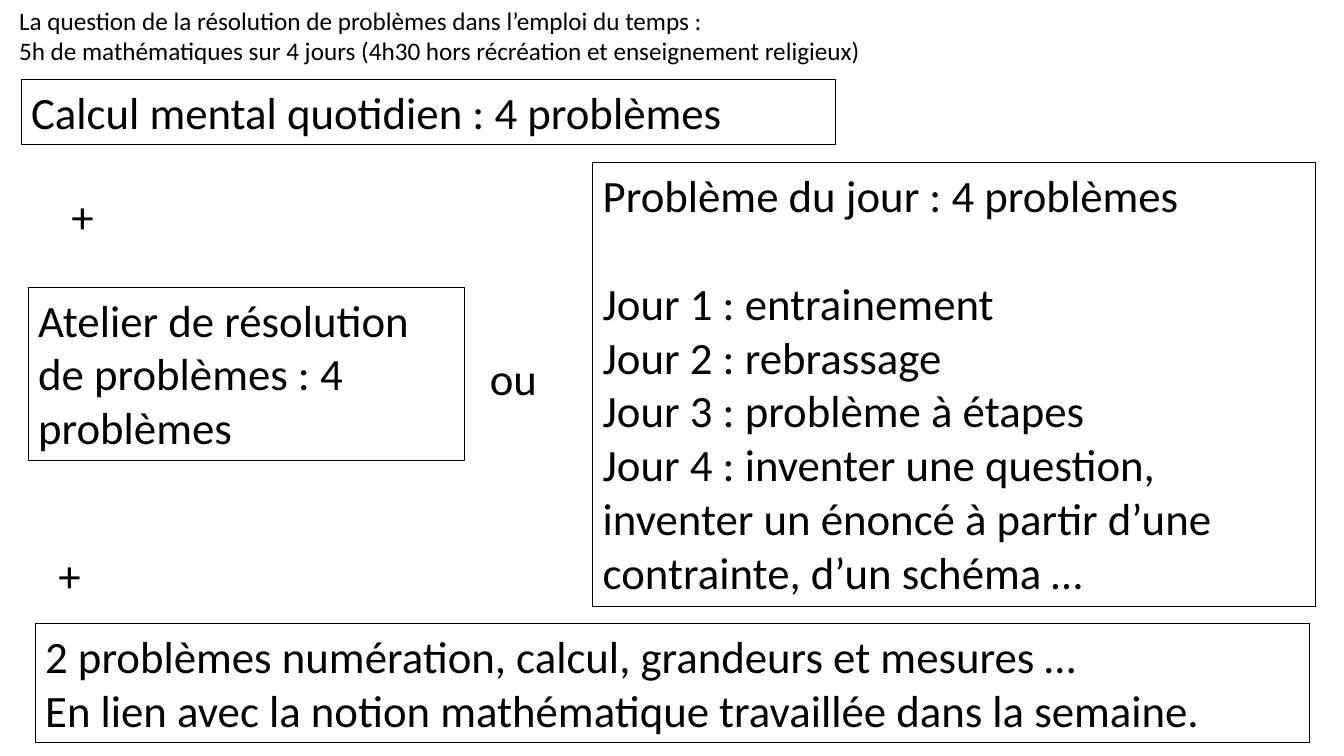
"""Build the slide on problem solving in the weekly maths timetable."""
import pptx
import pptx.dml.color
import pptx.enum.shapes
import pptx.enum.text
import pptx.util

PX = 9144
BLACK = pptx.dml.color.RGBColor(0, 0, 0)
FONT = "Calibri"
BODY_SIZE = 32
LINE_GAP = 39


def px(*lengths):
    """Turn lengths in px into EMU."""
    return [pptx.util.Emu(n * PX) for n in lengths]


def write(sp, lines, size):
    """Fill a shape with one left-aligned paragraph per line."""
    tf = sp.text_frame
    tf.word_wrap = True
    tf.auto_size = pptx.enum.text.MSO_AUTO_SIZE.SHAPE_TO_FIT_TEXT
    tf.vertical_anchor = pptx.enum.text.MSO_ANCHOR.TOP
    tf.text = "\n".join(lines)
    for p in tf.paragraphs:
        p.alignment = pptx.enum.text.PP_ALIGN.LEFT
        p.font.name = FONT
        p.font.size = pptx.util.Pt(size)
        p.font.color.rgb = BLACK
    return tf


def add_label(s, box, *lines, size=BODY_SIZE):
    """Add plain text without a frame."""
    return write(s.shapes.add_textbox(*px(*box)), lines, size)


def add_frame(s, box, *lines):
    """Add text in a thin black frame."""
    sp = s.shapes.add_shape(pptx.enum.shapes.MSO_SHAPE.RECTANGLE, *px(*box))
    sp.shadow.inherit = False
    sp.fill.background()
    sp.line.color.rgb = BLACK
    sp.line.width = pptx.util.Pt(0.75)
    return write(sp, lines, BODY_SIZE)


def main():
    """Create the presentation and save it."""
    prs = pptx.Presentation()
    prs.slide_width, prs.slide_height = px(1333, 750)
    s = prs.slides.add_slide(prs.slide_layouts[6])

    add_label(s, (9, 0, 918, 71),
              "La question de la résolution de problèmes dans l’emploi du temps :",
              "5h de mathématiques sur 4 jours (4h30 hors récréation et enseignement religieux)",
              size=18)
    add_frame(s, (21, 79, 808, 64), "Calcul mental quotidien : 4 problèmes")
    tf = add_frame(s, (588, 161, 717, 441),
                   "Problème du jour : 4 problèmes",
                   "Jour 1 : entrainement",
                   "Jour 2 : rebrassage",
                   "Jour 3 : problème à étapes",
                   "Jour 4 : inventer une question, inventer un énoncé à partir d’une "
                   "contrainte, d’un schéma …")
    tf.paragraphs[1].space_before = pptx.util.Pt(LINE_GAP)
    add_frame(s, (28, 285, 433, 172), "Atelier de résolution de problèmes : 4 problèmes")
    add_frame(s, (35, 619, 1264, 118),
              "2 problèmes numération, calcul, grandeurs et mesures …",
              "En lien avec la notion mathématique travaillée dans la semaine.")
    add_label(s, (61, 182, 41, 64), "+")
    add_label(s, (48, 538, 41, 64), "+")
    add_label(s, (476, 343, 70, 64), "ou")

    prs.save("out.pptx")


if __name__ == "__main__":
    main()
